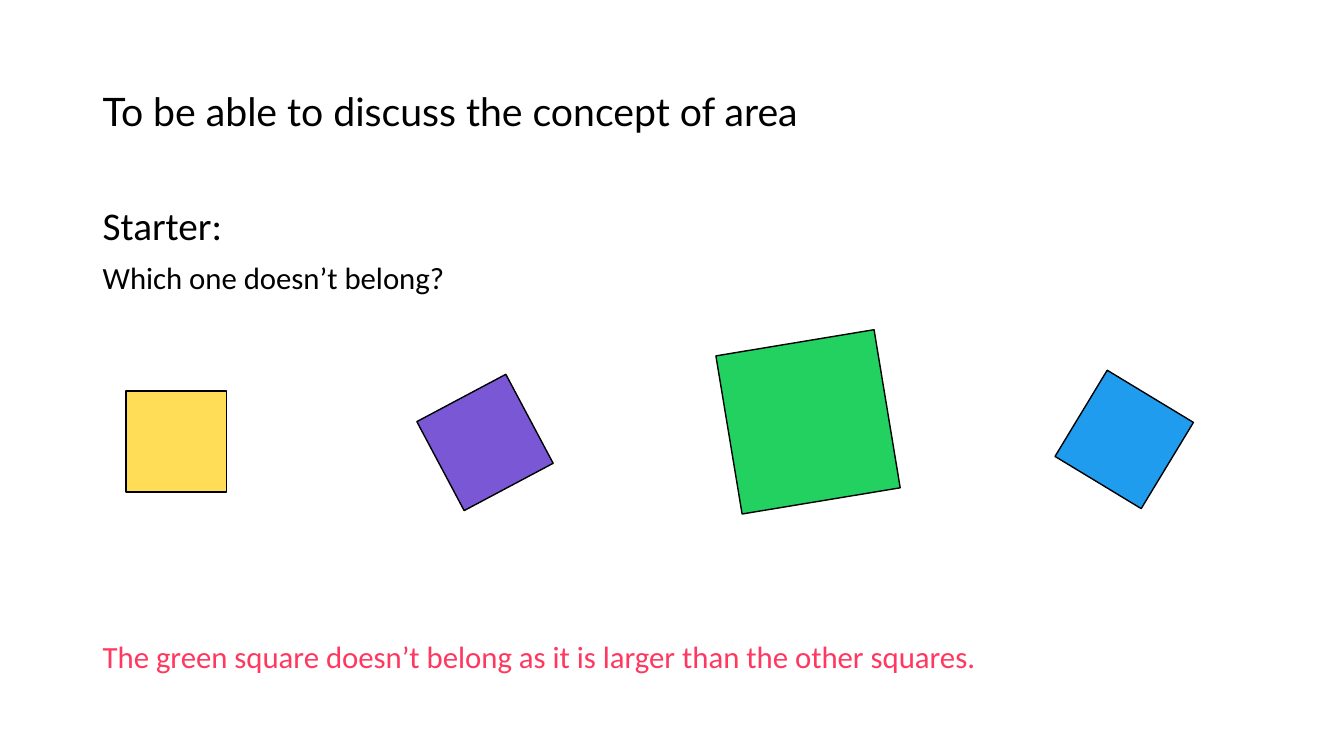
from pptx import Presentation
from pptx.dml.color import RGBColor
from pptx.enum.shapes import MSO_SHAPE
from pptx.enum.text import MSO_ANCHOR
from pptx.util import Emu, Pt

SQUARE = MSO_SHAPE.RECTANGLE
TOP, MIDDLE = MSO_ANCHOR.TOP, MSO_ANCHOR.MIDDLE
BLACK = RGBColor(0x00, 0x00, 0x00)
RED = RGBColor(0xFF, 0x38, 0x60)
YELLOW = RGBColor(0xFF, 0xDD, 0x57)
PURPLE = RGBColor(0x79, 0x57, 0xD5)
GREEN = RGBColor(0x23, 0xD1, 0x60)
BLUE = RGBColor(0x20, 0x9C, 0xEE)


def px(length):
    """Turn px, at 100 to the inch, into EMU."""
    return Emu(length * 9144)


class LessonSlide:
    """Holds the text style and the slide being built."""

    title_font = "Lato"
    body_font = "Calibri"
    line_spacing = 0.9
    paragraph_gap = Pt(10)
    outline = Pt(1)

    def __init__(self, deck):
        """Add a blank slide to the deck."""
        self.slide = deck.slides.add_slide(deck.slide_layouts[6])

    def text(self, left, top, width, height, lines, font=body_font,
             color=BLACK, anchor=TOP):
        """Add a text box with one paragraph for each (wording, size) pair."""
        box = self.slide.shapes.add_textbox(px(left), px(top), px(width), px(height))
        frame = box.text_frame
        frame.word_wrap = True
        frame.vertical_anchor = anchor
        for index, (wording, size) in enumerate(lines):
            para = frame.add_paragraph() if index else frame.paragraphs[0]
            para.text = wording
            para.line_spacing = self.line_spacing
            if index:
                para.space_before = self.paragraph_gap
            para.font.name = font
            para.font.size = Pt(size)
            para.font.color.rgb = color

    def square(self, left, top, side, color, rotation):
        """Add an outlined square turned clockwise by rotation degrees."""
        shape = self.slide.shapes.add_shape(SQUARE, px(left), px(top), px(side), px(side))
        shape.shadow.inherit = False
        shape.rotation = rotation
        shape.fill.solid()
        shape.fill.fore_color.rgb = color
        shape.line.color.rgb = BLACK
        shape.line.width = self.outline


def main():
    """Build the area starter slide and save it."""
    deck = Presentation()
    deck.slide_width, deck.slide_height = px(1333), px(750)
    page = LessonSlide(deck)

    page.text(92, 40, 960, 145, [("To be able to discuss the concept of area", 28)],
              font=page.title_font, anchor=MIDDLE)
    page.text(92, 200, 1150, 100, [("Starter:", 28), ("Which one doesn’t belong?", 22)])

    squares = [
        (125, 388, 100, YELLOW, 0),
        (431, 389, 100, PURPLE, 62),
        (722, 339, 159, GREEN, 350.6),
        (1065, 386, 100, BLUE, 31.2),
    ]
    for left, top, side, color, rotation in squares:
        page.square(left, top, side, color, rotation)

    answer = "The green square doesn’t belong as it is larger than the other squares."
    page.text(92, 632, 1150, 44, [(answer, 22)], color=RED)

    deck.save("out.pptx")


if __name__ == "__main__":
    main()
